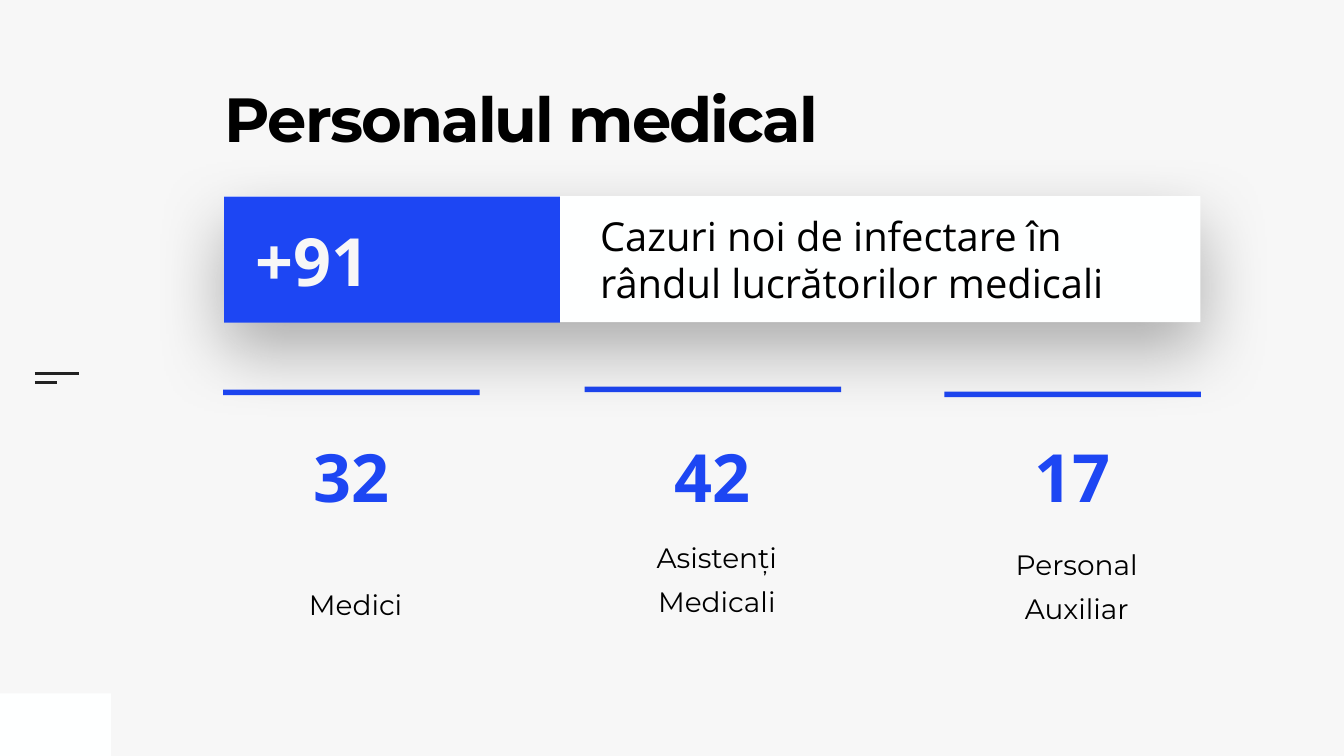
import dataclasses

import pptx
import pptx.dml.color
import pptx.enum.shapes
import pptx.enum.text
import pptx.oxml
import pptx.oxml.ns
import pptx.util

Inches = pptx.util.Inches
Align = pptx.enum.text.PP_ALIGN
Anchor = pptx.enum.text.MSO_ANCHOR


@dataclasses.dataclass(frozen=True)
class Theme:
    ground: str = "F7F7F7"
    white: str = "FEFFFF"
    blue: str = "1D46F3"
    black: str = "000000"
    rule: str = "222222"
    heading_font: str = "Montserrat"
    body_font: str = "Open Sans"
    title_size: int = 89
    number_size: int = 95
    message_size: int = 57
    label_size: int = 40


def color(value):
    return pptx.dml.color.RGBColor.from_string(value)


def write_text(box, text, *, size, font, fill, bold=False, align=Align.LEFT,
               anchor=Anchor.MIDDLE, insets=(0.1, 0.1, 0.1, 0.1),
               line_spacing=None, space_before=None, tracking=None):
    frame = box.text_frame
    frame.word_wrap = True
    frame.vertical_anchor = anchor
    frame.margin_left, frame.margin_top, frame.margin_right, frame.margin_bottom = map(Inches, insets)
    para = frame.paragraphs[0]
    para.alignment = align
    if line_spacing is not None:
        para.line_spacing = line_spacing
    if space_before is not None:
        para.space_before = pptx.util.Pt(space_before)
    span = para.add_run()
    span.text = text
    span.font.size = pptx.util.Pt(size)
    span.font.name = font
    span.font.bold = bold
    span.font.color.rgb = color(fill)
    if tracking is not None:
        span.font._element.set("spc", str(round(tracking * 100)))


class SlideBuilder:
    def __init__(self, slide, theme):
        self.slide = slide
        self.theme = theme
        background = slide.background.fill
        background.solid()
        background.fore_color.rgb = color(theme.ground)

    def panel(self, left, top, width, height, fill):
        shape = self.slide.shapes.add_shape(
            pptx.enum.shapes.MSO_SHAPE.RECTANGLE,
            Inches(left), Inches(top), Inches(width), Inches(height))
        shape.shadow.inherit = False
        shape.fill.solid()
        shape.fill.fore_color.rgb = color(fill)
        shape.line.fill.background()
        return shape

    def soft_shadow(self, shape, blur, distance, opacity):
        effects = shape._element.spPr.find(pptx.oxml.ns.qn("a:effectLst"))
        effects.append(pptx.oxml.parse_xml(
            f'<a:outerShdw {pptx.oxml.ns.nsdecls("a")} blurRad="{pptx.util.Pt(blur)}" '
            f'dist="{pptx.util.Pt(distance)}" dir="5400000" rotWithShape="0">'
            f'<a:srgbClr val="{self.theme.black}"><a:alpha val="{opacity * 1000}"/>'
            f'</a:srgbClr></a:outerShdw>'))

    def rule(self, left, top, length):
        line = self.slide.shapes.add_connector(
            pptx.enum.shapes.MSO_CONNECTOR.STRAIGHT,
            Inches(left), Inches(top), Inches(left + length), Inches(top))
        line.line.color.rgb = color(self.theme.rule)
        line.line.width = pptx.util.Pt(3)
        line._element.spPr.append(pptx.oxml.parse_xml(
            f'<a:effectLst {pptx.oxml.ns.nsdecls("a")}/>'))

    def text(self, left, top, width, height, text, **style):
        box = self.slide.shapes.add_textbox(
            Inches(left), Inches(top), Inches(width), Inches(height))
        write_text(box, text, **style)

    def number(self, left, top, width, text, fill, align=Align.LEFT):
        self.text(left, top, width, 1.8, text, size=self.theme.number_size,
                  font=self.theme.body_font, fill=fill, bold=True, align=align)

    def card(self, left, top, width, label):
        box = self.panel(left, top, width, 5.46, self.theme.ground)
        write_text(box, label, size=self.theme.label_size,
                   font=self.theme.heading_font, fill=self.theme.black,
                   align=Align.CENTER, anchor=Anchor.BOTTOM,
                   insets=(0.55, 0.71, 0.39, 0.87),
                   line_spacing=1.3, space_before=20)

    def title(self, text):
        self.text(4.46, 1.87, 13.01, 2.73, text, size=self.theme.title_size,
                  font=self.theme.heading_font, fill=self.theme.black, bold=True,
                  anchor=Anchor.TOP, insets=(0, 0, 0, 0),
                  line_spacing=0.8, tracking=-2.7)

    def banner(self, total, message):
        theme = self.theme
        back = self.panel(4.45, 3.89, 19.37, 2.5, theme.white)
        self.soft_shadow(back, blur=100, distance=40, opacity=30)
        self.text(11.81, 4.08, 11.76, 2.12, message, size=theme.message_size,
                  font=theme.body_font, fill=theme.black)
        self.panel(4.45, 3.9, 6.66, 2.5, theme.blue)
        self.number(4.98, 4.25, 6.03, total, theme.ground)


def main():
    deck = pptx.Presentation()
    deck.slide_width = Inches(26.67)
    deck.slide_height = Inches(15)
    theme = Theme()
    page = SlideBuilder(deck.slides.add_slide(deck.slide_layouts[6]), theme)

    page.panel(0, 13.76, 2.2, 1.24, theme.white)
    page.rule(0.69, 7.41, 0.88)
    page.rule(0.69, 7.59, 0.44)

    card_width = 5.09
    groups = [
        (4.43, 7.73, 7.73, "32", "Medici"),
        (11.6, 7.67, 7.67, "42", "Asistenți Medicali"),
        (18.74, 7.81, 7.77, "17", "Personal Auxiliar"),
    ]
    for left, card_top, bar_top, count, label in groups:
        page.card(left, card_top, card_width, label)
        page.panel(left, bar_top, card_width, 0.11, theme.blue)

    page.title("Personalul medical")
    page.banner("+91", "Cazuri noi de infectare în rândul lucrătorilor medicali")

    for left, card_top, bar_top, count, label in groups:
        page.number(left, 8.54, card_width, count, theme.blue, Align.CENTER)

    deck.save("out.pptx")


if __name__ == "__main__":
    main()
